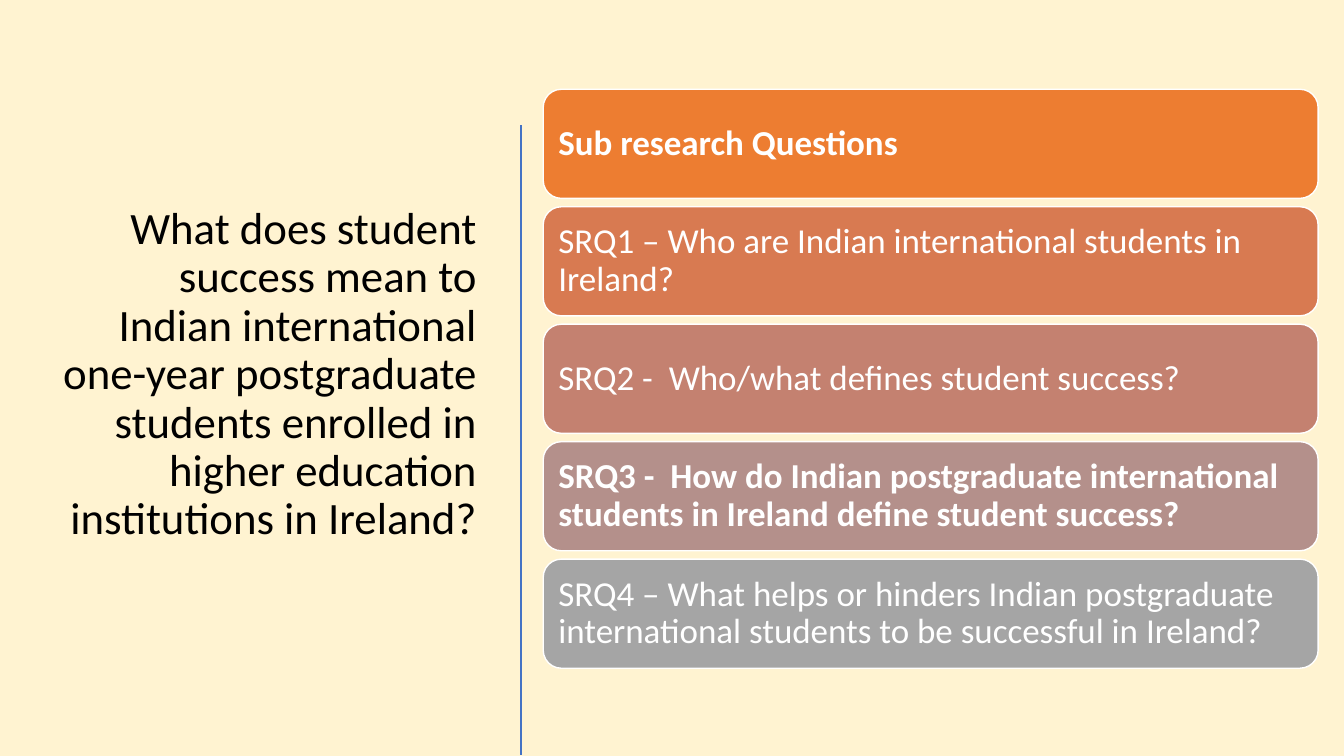
from dataclasses import dataclass

from lxml import etree
from pptx import Presentation
from pptx.dml.color import RGBColor
from pptx.enum.shapes import MSO_CONNECTOR, MSO_SHAPE
from pptx.enum.text import MSO_ANCHOR, PP_ALIGN
from pptx.oxml.ns import qn
from pptx.util import Cm, Pt

ROUNDED = MSO_SHAPE.ROUNDED_RECTANGLE
STRAIGHT = MSO_CONNECTOR.STRAIGHT
MIDDLE = MSO_ANCHOR.MIDDLE
LEFT, RIGHT = PP_ALIGN.LEFT, PP_ALIGN.RIGHT


@dataclass(frozen=True)
class Theme:
    font: str = "Calibri"
    background: str = "FFF3D1"
    title: str = "000000"
    divider: str = "4472C4"
    card_text: str = "FFFFFF"
    card_border: str = "FFFFFF"
    title_size: int = 32
    card_size: int = 25


@dataclass(frozen=True)
class Card:
    text: str
    fill: str
    bold: bool = False


THEME = Theme()

MAIN_QUESTION = (
    "What does student success mean to Indian international one-year "
    "postgraduate students enrolled in higher education institutions in Ireland?"
)

CARDS = [
    Card("Sub research Questions", "ED7D31", bold=True),
    Card("SRQ1 – Who are Indian international students in Ireland?", "D87A51"),
    Card("SRQ2 -  Who/what defines student success?", "C48170"),
    Card("SRQ3 -  How do Indian postgraduate international students in Ireland "
         "define student success?", "B4908B", bold=True),
    Card("SRQ4 – What helps or hinders Indian postgraduate international students "
         "to be successful in Ireland?", "A5A5A5"),
]

# Card column geometry, in centimetres
CARD_LEFT, CARD_TOP = 13.69, 2.25
CARD_WIDTH, CARD_HEIGHT = 19.53, 2.75
CARD_PITCH = 2.96


def color(value: str) -> RGBColor:
    return RGBColor.from_string(value)


def apply(target, values: dict) -> None:
    for name, value in values.items():
        setattr(target, name, value)


def write_text(shape, text: str, size: int, text_color: str, alignment,
               bold: bool = False, bottom: float = 0.25) -> None:
    frame = shape.text_frame
    apply(frame, {
        "word_wrap": True, "vertical_anchor": MIDDLE,
        "margin_left": Cm(0.25), "margin_right": Cm(0.25),
        "margin_top": Cm(0.25), "margin_bottom": Cm(bottom),
    })
    paragraph = frame.paragraphs[0]
    apply(paragraph, {"alignment": alignment, "line_spacing": 0.9})
    run = paragraph.add_run()
    run.text = text
    apply(run.font, {"name": THEME.font, "size": Pt(size), "bold": bold})
    run.font.color.rgb = color(text_color)


def add_main_question(slide) -> None:
    box = slide.shapes.add_textbox(Cm(1.32), Cm(2.97), Cm(10.95), Cm(15.52))
    # The deeper bottom margin lifts the text above the middle of its box
    write_text(box, MAIN_QUESTION, THEME.title_size, THEME.title, RIGHT, bottom=2.8)


def add_divider(slide) -> None:
    divider = slide.shapes.add_connector(
        STRAIGHT, Cm(13.13), Cm(3.15), Cm(13.13), Cm(19.02))
    divider.line.color.rgb = color(THEME.divider)
    divider.line.width = Pt(2)
    etree.SubElement(divider.element.spPr, qn("a:effectLst"))


def add_card(slide, card: Card, row: int) -> None:
    shape = slide.shapes.add_shape(
        ROUNDED, Cm(CARD_LEFT), Cm(CARD_TOP + row * CARD_PITCH),
        Cm(CARD_WIDTH), Cm(CARD_HEIGHT))
    shape.shadow.inherit = False
    shape.fill.solid()
    shape.fill.fore_color.rgb = color(card.fill)
    shape.line.color.rgb = color(THEME.card_border)
    shape.line.width = Pt(1)
    write_text(shape, card.text, THEME.card_size, THEME.card_text, LEFT, card.bold)


def main() -> None:
    presentation = Presentation()
    apply(presentation, {"slide_width": Cm(33.87), "slide_height": Cm(19.05)})
    slide = presentation.slides.add_slide(presentation.slide_layouts[6])

    # Background
    background = slide.background.fill
    background.solid()
    background.fore_color.rgb = color(THEME.background)

    # Main question and divider on the left
    add_main_question(slide)
    add_divider(slide)

    # Sub-question cards on the right
    for row, card in enumerate(CARDS):
        add_card(slide, card, row)

    presentation.save("out.pptx")


if __name__ == "__main__":
    main()
